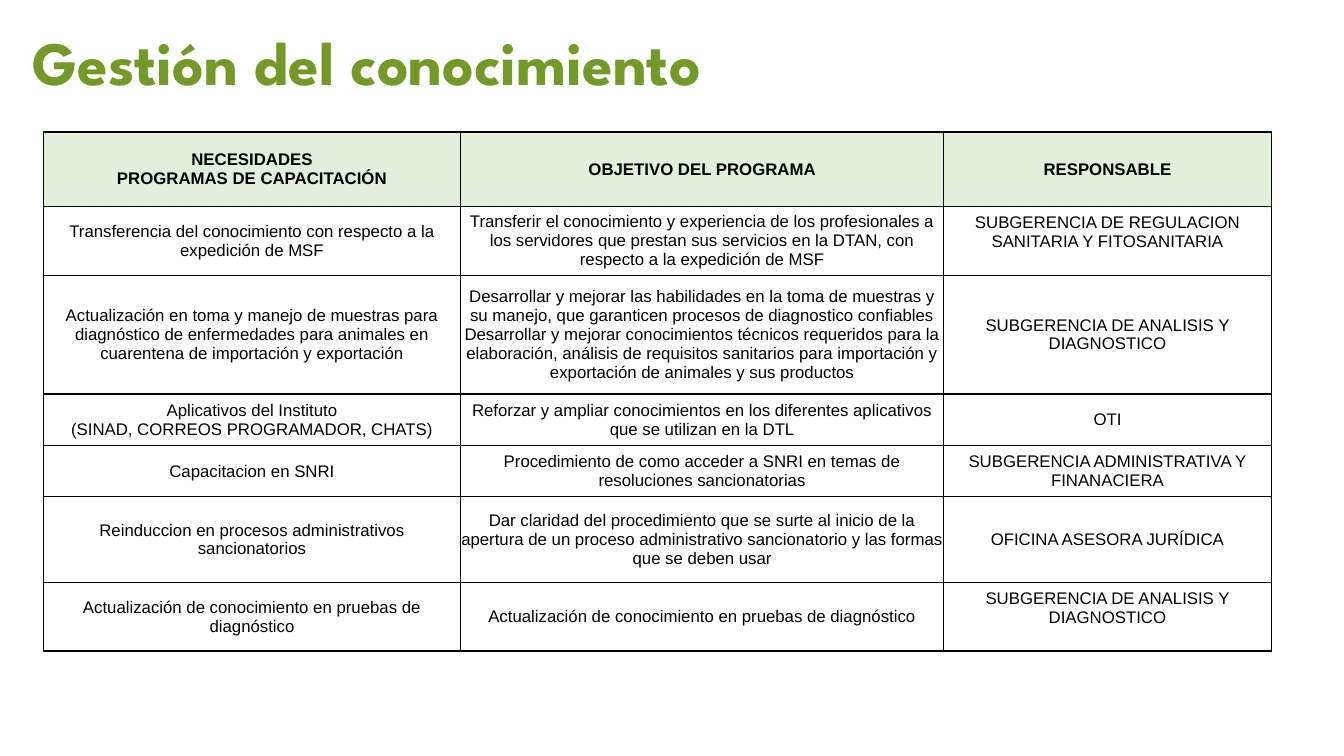
from dataclasses import dataclass

from lxml.etree import SubElement
from pptx import Presentation
from pptx.dml.color import RGBColor
from pptx.enum.text import MSO_ANCHOR, MSO_AUTO_SIZE, PP_ALIGN
from pptx.oxml.ns import qn
from pptx.util import Inches, Pt


@dataclass(frozen=True)
class Theme:
    title_color: RGBColor = RGBColor.from_string("739A28")
    text_color: RGBColor = RGBColor.from_string("000000")
    header_fill: RGBColor = RGBColor.from_string("E2EFDA")
    border_color: str = "000000"
    border_width: Pt = Pt(1)
    title_font: str = "League Spartan"
    table_font: str = "Arial"
    title_size: Pt = Pt(44)
    table_size: Pt = Pt(12)


THEME = Theme()

# Table content
COLUMN_WIDTHS = (4.14, 4.79, 3.25)
ROW_HEIGHTS = (0.74, 0.68, 1.18, 0.51, 0.51, 0.85, 0.68)
RAISED_CELLS = {(1, 2), (6, 2)}
PROGRAMS = (
    ("NECESIDADES\nPROGRAMAS DE CAPACITACIÓN", "OBJETIVO DEL PROGRAMA", "RESPONSABLE"),
    (
        "Transferencia del conocimiento con respecto a la expedición de MSF",
        "Transferir el conocimiento y experiencia de los profesionales a los servidores "
        "que prestan sus servicios en la DTAN, con respecto a la expedición de MSF",
        "SUBGERENCIA DE REGULACION SANITARIA Y FITOSANITARIA",
    ),
    (
        "Actualización en toma y manejo de muestras para diagnóstico de enfermedades "
        "para animales en cuarentena de importación y exportación",
        "Desarrollar y mejorar las habilidades en la toma de muestras y su manejo, "
        "que garanticen procesos de diagnostico confiables\n"
        "Desarrollar y mejorar conocimientos técnicos requeridos para la elaboración, "
        "análisis de requisitos sanitarios para importación y exportación de animales "
        "y sus productos",
        "SUBGERENCIA DE ANALISIS Y DIAGNOSTICO",
    ),
    (
        "Aplicativos del Instituto\n(SINAD, CORREOS PROGRAMADOR, CHATS)",
        "Reforzar y ampliar conocimientos en los diferentes aplicativos "
        "que se utilizan en la DTL",
        "OTI",
    ),
    (
        "Capacitacion en SNRI",
        "Procedimiento de como acceder a SNRI en temas de resoluciones sancionatorias",
        "SUBGERENCIA ADMINISTRATIVA Y FINANACIERA",
    ),
    (
        "Reinduccion en procesos administrativos sancionatorios",
        "Dar claridad del procedimiento que se surte al inicio de la apertura de un "
        "proceso administrativo sancionatorio y las formas que se deben usar",
        "OFICINA ASESORA JURÍDICA",
    ),
    (
        "Actualización de conocimiento en pruebas de diagnóstico",
        "Actualización de conocimiento en pruebas de diagnóstico",
        "SUBGERENCIA DE ANALISIS Y DIAGNOSTICO",
    ),
)


def apply_format(target, values):
    for name, value in values.items():
        setattr(target, name, value)


def write_text(paragraph, text, color, paragraph_format, font_format):
    paragraph.text = text
    apply_format(paragraph, paragraph_format)
    for run in paragraph.runs:
        apply_format(run.font, font_format)
        run.font.color.rgb = color


def add_title(slide, text):
    title = slide.shapes.title
    apply_format(title, {
        "left": Inches(0.22), "top": Inches(0),
        "width": Inches(11.5), "height": Inches(1.31),
    })
    apply_format(title.text_frame, {
        "vertical_anchor": MSO_ANCHOR.MIDDLE,
        "auto_size": MSO_AUTO_SIZE.NONE,
        "word_wrap": True,
    })
    write_text(
        title.text_frame.paragraphs[0], text, THEME.title_color,
        {"alignment": PP_ALIGN.LEFT, "line_spacing": 0.9},
        {"name": THEME.title_font, "size": THEME.title_size, "bold": True},
    )


def set_borders(cell):
    properties = cell._tc.get_or_add_tcPr()
    for side in ("a:lnL", "a:lnR", "a:lnT", "a:lnB"):
        line = SubElement(properties, qn(side), w=str(THEME.border_width))
        fill = SubElement(line, qn("a:solidFill"))
        SubElement(fill, qn("a:srgbClr"), val=THEME.border_color)


def fill_cell(cell, text, is_header, is_raised):
    apply_format(cell, {
        "margin_left": 0, "margin_right": 0, "margin_top": 0,
        "margin_bottom": Inches(0.18) if is_raised else 0,
        "vertical_anchor": MSO_ANCHOR.MIDDLE,
    })
    set_borders(cell)
    if is_header:
        cell.fill.solid()
        cell.fill.fore_color.rgb = THEME.header_fill
    else:
        cell.fill.background()
    write_text(
        cell.text_frame.paragraphs[0], text, THEME.text_color,
        {"alignment": PP_ALIGN.CENTER},
        {"name": THEME.table_font, "size": THEME.table_size, "bold": is_header},
    )


def add_program_table(slide):
    table = slide.shapes.add_table(
        len(ROW_HEIGHTS), len(COLUMN_WIDTHS), Inches(0.43), Inches(1.31),
        Inches(sum(COLUMN_WIDTHS)), Inches(sum(ROW_HEIGHTS)),
    ).table
    apply_format(table, {"first_row": True, "horz_banding": False})
    for column, width in zip(table.columns, COLUMN_WIDTHS):
        column.width = Inches(width)
    for row, height in zip(table.rows, ROW_HEIGHTS):
        row.height = Inches(height)
    for row_index, texts in enumerate(PROGRAMS):
        for column_index, text in enumerate(texts):
            fill_cell(
                table.cell(row_index, column_index), text,
                is_header=row_index == 0,
                is_raised=(row_index, column_index) in RAISED_CELLS,
            )


def main():
    # Slide with the title-only layout
    presentation = Presentation()
    presentation.slide_width = Inches(13.33)
    presentation.slide_height = Inches(7.5)
    slide = presentation.slides.add_slide(presentation.slide_layouts[5])

    # Title and table
    add_title(slide, "Gestión del conocimiento")
    add_program_table(slide)

    presentation.save("out.pptx")


if __name__ == "__main__":
    main()
